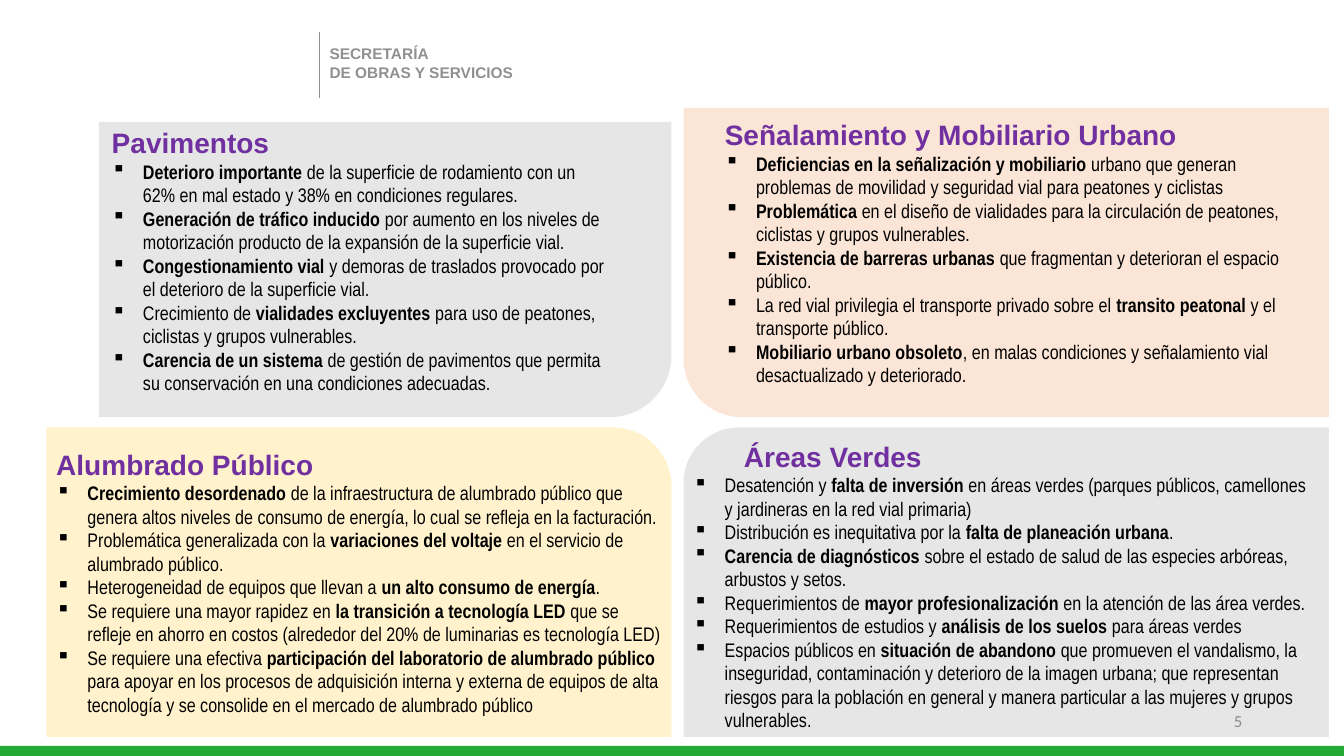
import pptx
import pptx.util
import pptx.dml.color
import pptx.enum.shapes
import pptx.enum.text
import pptx.oxml.ns
import lxml.etree

PX = 9144  # EMU per px, 100 px to the inch
BULLET_INDENT = 31
COLORS = {
    "gray": "E7E6E6", "peach": "FBE5D6", "cream": "FFF2CC", "green": "24A836",
    "heading": "7030A0", "body": "000000", "header": "90918F", "number": "8C8C8C",
}

# panel: box, color, corner radius, flips; text: box, heading indent.
# Double asterisks enclose the bold words of a bullet.
TOPICS = [
    {
        "panel": (98, 121, 568, 293), "color": "gray", "corner": 0.21, "flips": ("flipV",),
        "text": (101, 120, 511, 303), "heading": "Pavimentos", "heading_indent": 0,
        "bullets": [
            "**Deterioro importante** de la superficie de rodamiento con un 62% en mal estado y 38% en condiciones regulares.",
            "**Generación de tráfico inducido **por aumento en los niveles de motorización producto de la expansión de la superficie vial.",
            "**Congestionamiento vial **y demoras de traslados provocado por el deterioro de la superficie vial.",
            "Crecimiento de **vialidades excluyentes **para uso de peatones, ciclistas y grupos vulnerables.",
            "**Carencia de un sistema **de gestión de pavimentos que permita su conservación en una condiciones adecuadas.",
        ],
    },
    {
        "panel": (678, 107, 640, 307), "color": "peach", "corner": 0.19, "flips": ("flipH", "flipV"),
        "text": (709, 112, 598, 279), "heading": "Señalamiento y Mobiliario Urbano", "heading_indent": 0,
        "bullets": [
            "**Deficiencias en la señalización y mobiliario **urbano que generan problemas de movilidad y seguridad vial para peatones y ciclistas",
            "**Problemática **en el diseño de vialidades para la circulación de peatones, ciclistas y grupos vulnerables.",
            "**Existencia de barreras urbanas **que fragmentan y deterioran el espacio público.",
            "La red vial privilegia el transporte privado sobre el **transito peatonal **y el transporte público.",
            "**Mobiliario urbano obsoleto**, en malas condiciones y señalamiento vial desactualizado y deteriorado.",
        ],
    },
    {
        "panel": (46, 424, 620, 307), "color": "cream", "corner": 0.19, "flips": (),
        "text": (46, 439, 620, 279), "heading": "Alumbrado Público", "heading_indent": 0,
        "bullets": [
            "**Crecimiento desordenado **de la infraestructura de alumbrado público que genera altos niveles de consumo de energía, lo cual se refleja en la facturación.",
            "Problemática generalizada con la **variaciones del voltaje **en el servicio de alumbrado público.",
            "Heterogeneidad de equipos que llevan a **un alto consumo de energía**.",
            "Se requiere una mayor rapidez en **la transición a tecnología LED **que se refleje en ahorro en costos (alrededor del 20% de luminarias es tecnología LED)",
            "Se requiere una efectiva **participación del laboratorio de alumbrado público** para apoyar en los procesos de adquisición interna y externa de equipos de alta tecnología y se consolide en el mercado de alumbrado público",
        ],
    },
    {
        "panel": (678, 424, 640, 307), "color": "gray", "corner": 0.18, "flips": ("flipH",),
        "text": (678, 431, 630, 303), "heading": "Áreas Verdes", "heading_indent": 50,
        "bullets": [
            "Desatención y **falta de inversión **en áreas verdes (parques públicos, camellones y jardineras en la red vial primaria)",
            "Distribución es inequitativa por la **falta de planeación urbana**.",
            "**Carencia de diagnósticos **sobre el estado de salud de las especies arbóreas, arbustos y setos.",
            "Requerimientos de **mayor profesionalización **en la atención de las área verdes.",
            "Requerimientos de estudios y **análisis de los suelos **para áreas verdes",
            "Espacios públicos en **situación de abandono **que promueven el vandalismo, la inseguridad, contaminación y deterioro de la imagen urbana; que representan riesgos para la población en general y manera particular a las mujeres y grupos vulnerables.",
        ],
    },
]


def emu(lengths):
    return [length * PX for length in lengths]


def rgb(color):
    return pptx.dml.color.RGBColor.from_string(COLORS[color])


def style(font, name, size, color, bold=False):
    font.name = name
    font.size = pptx.util.Pt(size)
    font.color.rgb = rgb(color)
    font.bold = bold


def add_block(slide, preset, box, color):
    block = slide.shapes.add_shape(preset, *emu(box))
    block.shadow.inherit = False
    block.fill.solid()
    block.fill.fore_color.rgb = rgb(color)
    block.line.fill.background()
    return block


def add_panel(slide, topic):
    panel = add_block(slide, pptx.enum.shapes.MSO_SHAPE.ROUND_1_RECTANGLE, topic["panel"], topic["color"])
    panel.adjustments[0] = topic["corner"]
    for flip in topic["flips"]:
        panel._element.spPr.xfrm.set(flip, "1")


def add_text_frame(slide, box):
    frame = slide.shapes.add_textbox(*emu(box)).text_frame
    frame.word_wrap = True
    return frame


def add_bullet(frame, marked_text):
    paragraph = frame.add_paragraph()
    properties = paragraph._p.get_or_add_pPr()
    properties.set("marL", str(BULLET_INDENT * PX))
    properties.set("indent", str(-BULLET_INDENT * PX))
    mark = lxml.etree.SubElement(properties, pptx.oxml.ns.qn("a:buChar"))
    mark.set("char", "▪")
    for position, words in enumerate(marked_text.split("**")):
        if words:
            run = paragraph.add_run()
            run.text = words
            style(run.font, "Arial Narrow", 14, "body", bold=position % 2 == 1)


def add_topic_text(slide, topic):
    frame = add_text_frame(slide, topic["text"])
    frame.text = topic["heading"]
    heading = frame.paragraphs[0]
    if topic["heading_indent"]:
        heading._p.get_or_add_pPr().set("marL", str(topic["heading_indent"] * PX))
    style(heading.runs[0].font, "Arial", 20, "heading", bold=True)
    for bullet in topic["bullets"]:
        add_bullet(frame, bullet)


def add_header(slide):
    frame = add_text_frame(slide, (317, 39, 213, 66))
    frame.text = "SECRETARÍA\nDE OBRAS Y SERVICIOS"
    for paragraph in frame.paragraphs:
        style(paragraph.runs[0].font, "Arial", 11, "header", bold=True)
    rule = slide.shapes.add_connector(
        pptx.enum.shapes.MSO_CONNECTOR.STRAIGHT, *emu((317, 32, 317, 97)))
    rule.line.color.rgb = rgb("header")
    rule.line.width = pptx.util.Pt(1)
    lxml.etree.SubElement(rule._element.spPr, pptx.oxml.ns.qn("a:effectLst"))


def add_page_number(slide, number):
    frame = add_text_frame(slide, (942, 695, 300, 40))
    frame.vertical_anchor = pptx.enum.text.MSO_ANCHOR.MIDDLE
    frame.text = str(number)
    paragraph = frame.paragraphs[0]
    paragraph.alignment = pptx.enum.text.PP_ALIGN.RIGHT
    style(paragraph.runs[0].font, "Calibri", 12, "number")


def main():
    presentation = pptx.Presentation()
    presentation.slide_width, presentation.slide_height = emu((1333, 750))
    slide = presentation.slides.add_slide(presentation.slide_layouts[6])
    add_header(slide)
    for topic in TOPICS:
        add_panel(slide, topic)
    add_block(slide, pptx.enum.shapes.MSO_SHAPE.RECTANGLE, (0, 740, 1333, 10), "green")
    add_page_number(slide, 5)
    for topic in TOPICS:
        add_topic_text(slide, topic)
    presentation.save("out.pptx")


if __name__ == "__main__":
    main()
